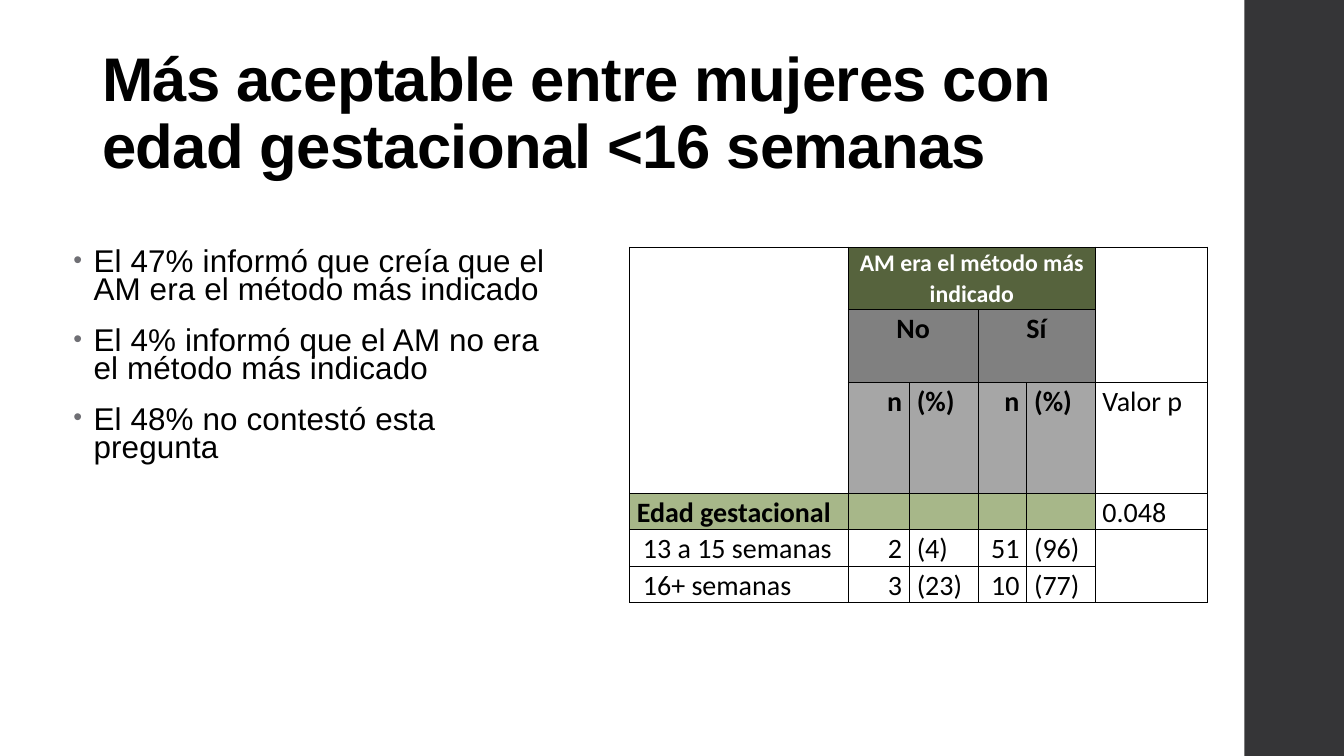
from lxml.etree import SubElement
from pptx import Presentation
from pptx.dml.color import RGBColor
from pptx.enum.shapes import MSO_SHAPE as SHAPE
from pptx.enum.text import MSO_ANCHOR as ANCHOR, PP_ALIGN as ALIGN
from pptx.oxml.ns import qn
from pptx.util import Pt

SLIDE_W, SLIDE_H = 1583.28, 890.64
BLACK, WHITE = "000000", "FFFFFF"
GREY = "6F6F74"

COLUMNS = [257.8, 72, 80.6, 57.6, 80.6, 131.8]
ROW_HEIGHTS = [74, 86, 130, 43, 43, 43]
ROWS = [
    ["", "AM era el método más indicado", "", "", "", ""],
    ["", "No", "", "Sí", "", ""],
    ["", "n", "(%)", "n", "(%)", "Valor p"],
    ["Edad gestacional", "", "", "", "", "0.048"],
    ["13 a 15 semanas", "2", "(4)", "51", "(96)", ""],
    ["16+ semanas", "3", "(23)", "10", "(77)", ""],
]
# First row, first column, last row, last column
MERGES = [(0, 0, 2, 0), (0, 1, 0, 4), (0, 5, 1, 5),
          (1, 1, 1, 2), (1, 3, 1, 4), (4, 5, 5, 5)]
ROW_FILLS = ["56633D", "808080", "A6A6A6", "A7B789", None, None]


def color(value):
    return RGBColor.from_string(value)


def write(p, text, font="Arial", size=33, fill=BLACK, bold=False, spacing=0,
          align=ALIGN.LEFT, line=1.0, before=0, after=0):
    p.alignment, p.line_spacing = align, line
    p.space_before, p.space_after = Pt(before), Pt(after)
    r = p.add_run()
    r.text = text
    r.font.name, r.font.size, r.font.bold = font, Pt(size), bold
    r.font.color.rgb = color(fill)
    if spacing:
        r._r.get_or_add_rPr().set("spc", str(round(spacing * 100)))


def add_bullet(p, indent):
    pPr = p._p.get_or_add_pPr()
    pPr.set("marL", str(Pt(indent)))
    pPr.set("indent", str(-Pt(indent)))
    SubElement(SubElement(pPr, qn("a:buClr")), qn("a:srgbClr"), val=GREY)
    SubElement(pPr, qn("a:buSzPct"), val="80000")
    SubElement(pPr, qn("a:buFont"), typeface="Arial")
    SubElement(pPr, qn("a:buChar"), char="•")


def add_borders(cell):
    tcPr = cell._tc.get_or_add_tcPr()
    for side in ("a:lnL", "a:lnR", "a:lnT", "a:lnB"):
        ln = SubElement(tcPr, qn(side), w=str(Pt(1)))
        SubElement(SubElement(ln, qn("a:solidFill")), qn("a:srgbClr"), val=BLACK)


def add_text_frame(s, x, y, w, h, anchor=ANCHOR.TOP):
    tf = s.shapes.add_textbox(Pt(x), Pt(y), Pt(w), Pt(h)).text_frame
    tf.word_wrap, tf.vertical_anchor = True, anchor
    tf.margin_left = tf.margin_right = tf.margin_top = tf.margin_bottom = Pt(3.6)
    return tf


def add_side_band(s, x, y, w, h):
    sp = s.shapes.add_shape(SHAPE.RECTANGLE, Pt(x), Pt(y), Pt(w), Pt(h))
    sp.shadow.inherit = False
    sp.fill.solid()
    sp.fill.fore_color.rgb = color("353537")
    sp.line.fill.background()


def add_title(s, x, y, w, h):
    tf = add_text_frame(s, x, y, w, h, ANCHOR.BOTTOM)
    write(tf.paragraphs[0],
          "Más aceptable entre mujeres con edad gestacional <16 semanas",
          size=72.6, bold=True, spacing=-0.8, line=0.9)


def add_findings(s, x, y, w, h):
    tf = add_text_frame(s, x, y, w, h)
    findings = ["El 47% informó que creía que el AM era el método más indicado",
                "El 4% informó que el AM no era el método más indicado",
                "El 48% no contestó esta pregunta"]
    for i, text in enumerate(findings):
        p = tf.add_paragraph() if i else tf.paragraphs[0]
        add_bullet(p, 23.8)
        write(p, text, size=37, spacing=0.2, line=0.75,
              before=23.1 if i else 0, after=3.3)


def fill_cell(cell, row, col):
    add_borders(cell)
    cell.margin_left = cell.margin_right = Pt(8.6)
    cell.margin_top = cell.margin_bottom = 0
    # The outer columns stay clear, except the heading of the data rows
    fill = ROW_FILLS[row] if 1 <= col <= 4 or (row, col) == (3, 0) else None
    if fill:
        cell.fill.solid()
        cell.fill.fore_color.rgb = color(fill)
    else:
        cell.fill.background()
    text = ROWS[row][col]
    if not text:
        return
    p = cell.text_frame.paragraphs[0]
    if row > 3 and col == 0:
        p._p.get_or_add_pPr().set("marL", str(Pt(7.2)))
    align = (ALIGN.CENTER if row < 2 else
             ALIGN.RIGHT if col in (1, 3) else ALIGN.LEFT)
    write(p, text, font="Calibri", size=33 if row else 28,
          fill=BLACK if row else WHITE, bold=row < 4 and col < 5,
          align=align, line=1.07)


def add_results_table(s, x, y, w, h):
    table = s.shapes.add_table(len(ROWS), len(COLUMNS),
                               Pt(x), Pt(y), Pt(w), Pt(h)).table
    table.first_row = table.horz_banding = False
    for column, width in zip(table.columns, COLUMNS):
        column.width = Pt(width)
    for row, height in zip(table.rows, ROW_HEIGHTS):
        row.height = Pt(height)
    for row in range(len(ROWS)):
        for col in range(len(COLUMNS)):
            fill_cell(table.cell(row, col), row, col)
    for top, left, bottom, right in MERGES:
        table.cell(top, left).merge(table.cell(bottom, right))


def main():
    prs = Presentation()
    prs.slide_width, prs.slide_height = Pt(SLIDE_W), Pt(SLIDE_H)
    s = prs.slides.add_slide(prs.slide_layouts[6])
    add_side_band(s, 1466, 0, SLIDE_W - 1466, SLIDE_H)
    add_title(s, 116.6, 45.4, 1258.6, 172)
    add_findings(s, 82.8, 290.9, 581.8, 284.4)
    add_results_table(s, 741.6, 290.9, sum(COLUMNS), sum(ROW_HEIGHTS))
    prs.save("out.pptx")


if __name__ == "__main__":
    main()
